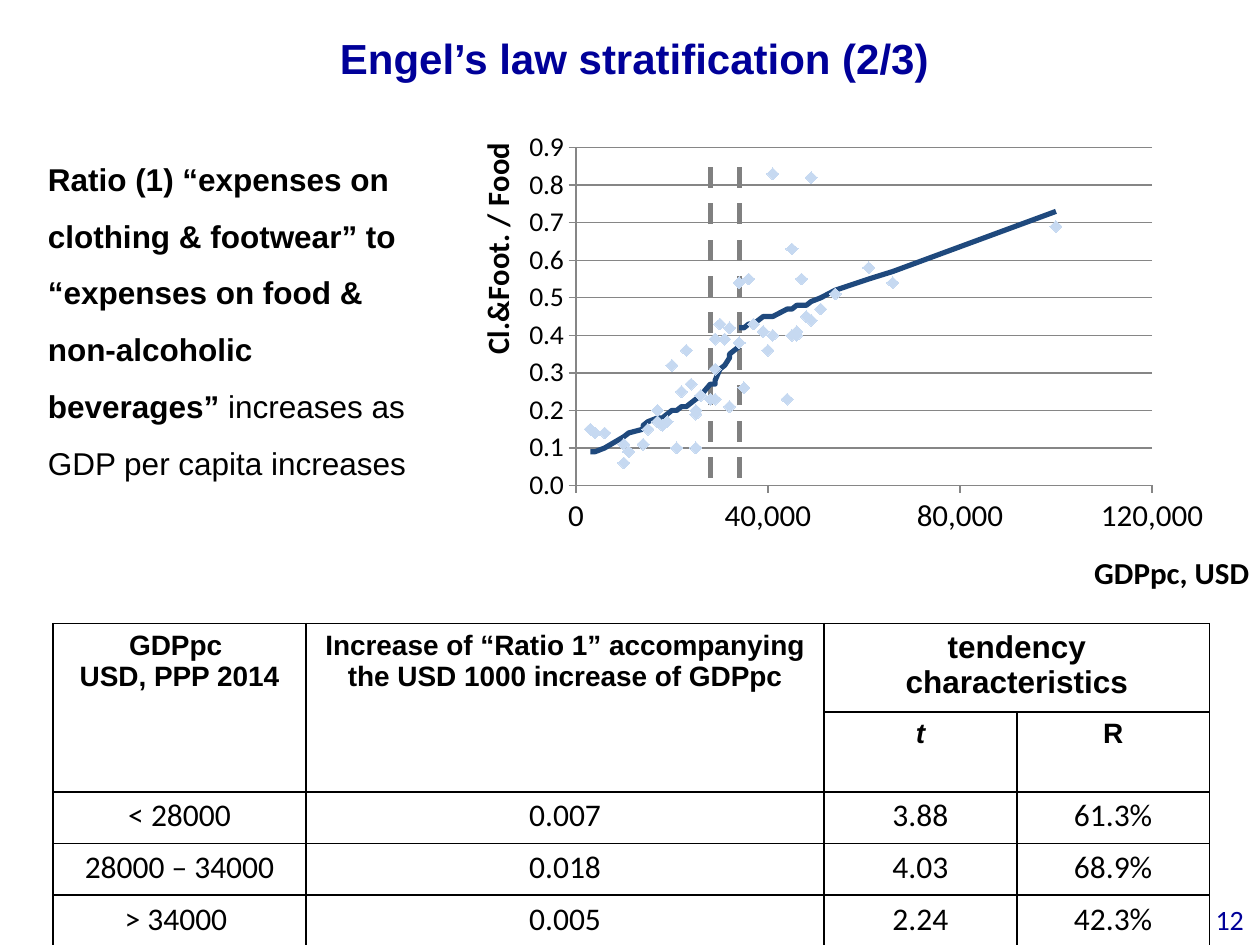
from lxml import etree
from pptx import Presentation
from pptx import util as u
from pptx.chart import data as chart_data
from pptx.dml import color
from pptx.enum import chart as charts, dml, text
from pptx.oxml import ns, parse_xml

COLORS = {
    "navy": "000099", "black": "000000", "grid": "868686",
    "point": "C6D9F1", "trend": "1F497D", "border": "808080",
}
GDP = [thousand * 1000 for thousand in (
    3, 4, 6, 10, 10, 11, 14, 14, 15, 17, 17, 18, 19, 20, 21, 22, 23, 24,
    25, 25, 25, 25, 26, 28, 29, 29, 29, 30, 31, 32, 32, 34, 34, 35, 36, 37,
    39, 40, 41, 41, 44, 45, 45, 46, 46, 47, 48, 49, 49, 51, 54, 61, 66, 100)]
RATIOS = [
    0.15, 0.14, 0.14, 0.06, 0.11, 0.09, 0.11, 0.11, 0.15, 0.2, 0.17, 0.16,
    0.17, 0.32, 0.1, 0.25, 0.36, 0.27, 0.1, 0.2, 0.19, 0.19, 0.24, 0.23,
    0.31, 0.39, 0.23, 0.43, 0.39, 0.21, 0.42, 0.38, 0.54, 0.26, 0.55, 0.43,
    0.41, 0.36, 0.83, 0.4, 0.23, 0.63, 0.4, 0.41, 0.4, 0.55, 0.45, 0.82,
    0.44, 0.47, 0.51, 0.58, 0.54, 0.69]
LOW_TREND = [
    0.09, 0.09, 0.1, 0.13, 0.13, 0.14, 0.15, 0.16, 0.17, 0.18, 0.18, 0.18,
    0.19, 0.2, 0.2, 0.21, 0.21, 0.22, 0.23, 0.23, 0.23, 0.23, 0.24]
MIDDLE_TREND = [0.24, 0.27, 0.27, 0.28, 0.28, 0.31, 0.32, 0.34, 0.35, 0.37, 0.37]
HIGH_TREND = [
    0.42, 0.42, 0.43, 0.43, 0.45, 0.45, 0.45, 0.45, 0.47, 0.47, 0.47, 0.48,
    0.48, 0.48, 0.48, 0.49, 0.49, 0.5, 0.52, 0.55, 0.57, 0.73]
BORDER_HEIGHTS = [round(0.02 + 0.018 * step, 2) for step in range(48)]
HEADERS = [
    (0, 0, "GDPpc \nUSD, PPP 2014", 16, False),
    (0, 1, "Increase of “Ratio 1” accompanying the USD 1000 increase of GDPpc", 16, False),
    (0, 2, "tendency characteristics", 18, False),
    (1, 2, "t", 16, True),
    (1, 3, "R", 16, False),
]
RESULTS = [
    ("< 28000", "0.007", "3.88", "61.3%"),
    ("28000 – 34000", "0.018", "4.03", "68.9%"),
    ("> 34000 ", "0.005", "2.24", "42.3%"),
]


def rgb(name):
    return color.RGBColor.from_string(COLORS[name])


def style_font(font, size, name="Arial", shade="black", bold=False, italic=False):
    font.size = u.Pt(size)
    font.name = name
    font.color.rgb = rgb(shade)
    font.bold = bold
    font.italic = italic


def place(shape, left, top, width, height):
    shape.left, shape.top = u.Inches(left), u.Inches(top)
    shape.width, shape.height = u.Inches(width), u.Inches(height)


def add_title(slide):
    title = slide.shapes.title
    place(title, 0.9, 0.21, 8.27, 0.5)
    title.text_frame.text = "Engel’s law stratification (2/3)"
    paragraph = title.text_frame.paragraphs[0]
    paragraph.alignment = text.PP_ALIGN.CENTER
    style_font(paragraph.runs[0].font, 24, shade="navy", bold=True)


def add_body(slide):
    body = slide.placeholders[1]
    place(body, 0.28, 1.07, 3.23, 5.91)
    body.text_frame.auto_size = text.MSO_AUTO_SIZE.NONE
    paragraph = body.text_frame.paragraphs[0]
    paragraph.line_spacing = 1.5
    paragraph.space_before = u.Pt(0)
    properties = paragraph._p.get_or_add_pPr()
    properties.set("marL", "0")
    properties.set("indent", "0")
    etree.SubElement(properties, ns.qn("a:buNone"))
    for content, bold in (
        ("Ratio (1) “expenses on clothing & footwear” to “expenses on food & "
         "non-alcoholic beverages”", True),
        (" increases as GDP per capita increases", False),
    ):
        run = paragraph.add_run()
        run.text = content
        style_font(run.font, 18, bold=bold)


def add_page_number(slide):
    box = slide.shapes.add_textbox(*map(u.Inches, (9.53, 7.22, 0.44, 0.16)))
    frame = box.text_frame
    frame.word_wrap = True
    frame.vertical_anchor = text.MSO_ANCHOR.MIDDLE
    frame.text = "12"
    frame.paragraphs[0].alignment = text.PP_ALIGN.RIGHT
    style_font(frame.paragraphs[0].runs[0].font, 16, "Calibri", "navy")


def set_layout(element, inner=False, **fractions):
    for existing in element.findall(ns.qn("c:layout")):
        element.remove(existing)
    layout = parse_xml(f'<c:layout {ns.nsdecls("c")}><c:manualLayout/></c:layout>')
    settings = {"layoutTarget": "inner"} if inner else {}
    settings.update(xMode="edge", yMode="edge", **fractions)
    for tag, value in settings.items():
        etree.SubElement(layout[0], ns.qn(f"c:{tag}")).set("val", str(value))
    label = element.find(ns.qn("c:tx"))
    if label is None:
        element.insert(0, layout)
    else:
        label.addnext(layout)


def format_axis(axis, maximum, step, number_format, tick_size, title, x, y):
    axis.minimum_scale, axis.maximum_scale, axis.major_unit = 0, maximum, step
    axis.major_tick_mark = charts.XL_TICK_MARK.OUTSIDE
    axis.minor_tick_mark = charts.XL_TICK_MARK.NONE
    axis.tick_labels.number_format = number_format
    axis.tick_labels.number_format_is_linked = False
    style_font(axis.tick_labels.font, tick_size, "Calibri")
    axis.format.line.color.rgb = rgb("grid")
    axis.axis_title.text_frame.text = title
    run = axis.axis_title.text_frame.paragraphs[0].runs[0]
    style_font(run.font, 18, "Calibri", bold=True)
    set_layout(axis.axis_title.element, x=x, y=y)


def format_line(series, shade, dash=None):
    series.marker.style = charts.XL_MARKER_STYLE.NONE
    series.format.line.color.rgb = rgb(shade)
    series.format.line.width = u.Pt(3)
    if dash:
        series.format.line.dash_style = dash


def pad(values, start):
    return [None] * start + values + [None] * (len(GDP) - start - len(values))


def scatter_data():
    data = chart_data.XyChartData()
    groups = [(GDP, pad(values, start)) for values, start in (
        (RATIOS, 0), (LOW_TREND, 0), (MIDDLE_TREND, 22), (HIGH_TREND, 32))]
    groups += [(pad([limit] * len(BORDER_HEIGHTS), 3), pad(BORDER_HEIGHTS, 3))
               for limit in (28000, 34000)]
    for number, (horizontal, vertical) in enumerate(groups, 1):
        series = data.add_series(f"Series {number}")
        for point in zip(horizontal, vertical):
            series.add_data_point(*point)
    return data


def remove_empty_points(chart):
    for point in list(chart.element.iter(ns.qn("c:pt"))):
        if point.findtext(ns.qn("c:v")) in ("None", "", None):
            point.getparent().remove(point)


def add_scatter(slide):
    chart = slide.shapes.add_chart(
        charts.XL_CHART_TYPE.XY_SCATTER, *map(u.Inches, (3.73, 1.04, 6.23, 3.73)),
        scatter_data()).chart
    remove_empty_points(chart)
    chart.has_legend = False
    chart.has_title = False
    style_font(chart.font, 10, "Calibri")
    chart.plots[0].vary_by_categories = False
    set_layout(chart.element.find(f".//{ns.qn('c:plotArea')}"), inner=True,
               x=0.137, y=0.036, w=0.745, h=0.742)
    format_axis(chart.category_axis, 120000, 40000, "#,##0", 18, "GDPpc, USD", 0.8, 0.91)
    format_axis(chart.value_axis, 0.9, 0.1, "0.0", 16, "Cl.&Foot. / Food", 0, 0.02)
    chart.category_axis.has_major_gridlines = False
    chart.value_axis.major_gridlines.format.line.color.rgb = rgb("grid")
    body = chart.value_axis.axis_title.element.find(f".//{ns.qn('a:bodyPr')}")
    body.set("rot", "-5400000")
    body.set("vert", "horz")
    points, *lines = chart.plots[0].series
    points.format.line.fill.background()
    points.marker.style = charts.XL_MARKER_STYLE.DIAMOND
    points.marker.size = 7
    points.marker.format.fill.solid()
    points.marker.format.fill.fore_color.rgb = rgb("point")
    points.marker.format.line.color.rgb = rgb("point")
    points.smooth = False
    for index, series in enumerate(lines):
        series.smooth = False
        if index < 3:
            format_line(series, "trend")
        else:
            format_line(series, "border", dml.MSO_LINE.DASH)


def outline_cell(cell):
    cell.fill.background()
    properties = cell._tc.get_or_add_tcPr()
    for index, side in enumerate("LRTB"):
        properties.insert(index, parse_xml(
            f'<a:ln{side} {ns.nsdecls("a")} w="12700"><a:solidFill>'
            f'<a:srgbClr val="{COLORS["black"]}"/></a:solidFill></a:ln{side}>'))


def fill_cell(cell, content, size, **style):
    cell.text_frame.text = content
    for paragraph in cell.text_frame.paragraphs:
        paragraph.alignment = text.PP_ALIGN.CENTER
        style_font(paragraph.runs[0].font, size, **style)


def add_results(slide):
    table = slide.shapes.add_table(5, 4, *map(u.Inches, (0.42, 4.95, 9.18, 2.56))).table
    for column, width in zip(table.columns, (2.01, 4.11, 1.53, 1.53)):
        column.width = u.Inches(width)
    for row, height in zip(table.rows, (0.7, 0.63, 0.41, 0.41, 0.41)):
        row.height = u.Inches(height)
    for cell in table.iter_cells():
        outline_cell(cell)
    for first, last in (((0, 0), (1, 0)), ((0, 1), (1, 1)), ((0, 2), (0, 3))):
        table.cell(*first).merge(table.cell(*last))
    for row, column, content, size, italic in HEADERS:
        fill_cell(table.cell(row, column), content, size, bold=True, italic=italic)
    for row, values in enumerate(RESULTS, 2):
        for column, value in enumerate(values):
            cell = table.cell(row, column)
            cell.margin_top = cell.margin_bottom = u.Inches(0.04)
            fill_cell(cell, value, 18, name="Calibri")


def main():
    presentation = Presentation()
    presentation.slide_width, presentation.slide_height = u.Inches(10), u.Inches(7.5)
    slide = presentation.slides.add_slide(presentation.slide_layouts[1])
    for add_part in (add_title, add_body, add_page_number, add_scatter, add_results):
        add_part(slide)
    presentation.save("out.pptx")


if __name__ == "__main__":
    main()
